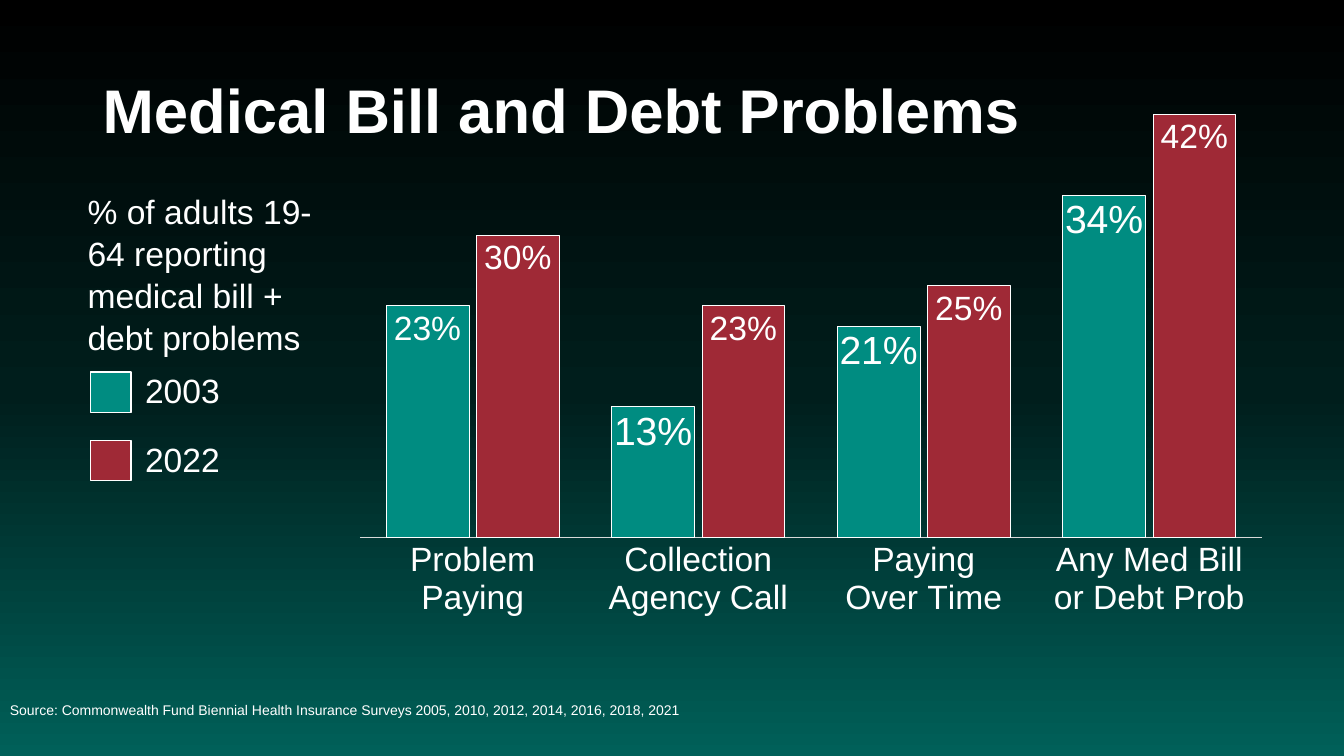
from lxml import etree
from pptx import Presentation
from pptx.chart.data import CategoryChartData
from pptx.dml.color import RGBColor
from pptx.enum.chart import XL_CHART_TYPE as ChartType
from pptx.enum.chart import XL_LABEL_POSITION as LabelPosition
from pptx.enum.chart import XL_TICK_MARK as TickMark
from pptx.enum.shapes import MSO_SHAPE as Shape
from pptx.enum.text import MSO_ANCHOR as Anchor
from pptx.oxml.ns import qn
from pptx.util import Inches, Pt

# Content
TITLE = "Medical Bill and Debt Problems"
SUBTITLE = "% of adults 19-64 reporting medical bill + debt problems"
SOURCE = ("Source: Commonwealth Fund Biennial Health Insurance Surveys "
          "2005, 2010, 2012, 2014, 2016, 2018, 2021")
CATEGORIES = ["Problem\nPaying", "Collection\nAgency Call",
              "Paying\nOver Time", "Any Med Bill\nor Debt Prob"]

# Style
FONT = "Arial"
WHITE = RGBColor(0xFF, 0xFF, 0xFF)
AXIS_GRAY = RGBColor(0xD9, 0xD9, 0xD9)
TEAL = RGBColor(0x00, 0x8C, 0x81)
RED = RGBColor(0x9F, 0x29, 0x36)
BACKGROUND_STOPS = [(0, "000000"), (52, "001E1C"), (100, "006059")]

# Year, values, colour, label size
SERIES = [
    ("2003", [0.23, 0.13, 0.21, 0.34], TEAL, 28),
    ("2022", [0.30, 0.23, 0.25, 0.42], RED, 24),
]
PLOT_LAYOUT = [("layoutTarget", "inner"), ("xMode", "edge"), ("yMode", "edge"),
               ("x", "0.244"), ("y", "0.001"), ("w", "0.74"), ("h", "0.801")]
LEGEND_LEFT, LEGEND_TOP, LEGEND_STEP, SWATCH = 0.9, 3.69, 0.68, 0.4


def style_font(font, size, bold=False):
    font.name = FONT
    font.size = Pt(size)
    font.bold = bold
    font.color.rgb = WHITE


def style_box(shape, color, line_width):
    shape.fill.solid()
    shape.fill.fore_color.rgb = color
    shape.line.color.rgb = WHITE
    shape.line.width = Pt(line_width)


def add_text(page, text, left, top, width, height, size, bold=False,
             anchor=Anchor.MIDDLE, wrap=True, spacing=1.0):
    box = page.shapes.add_textbox(Inches(left), Inches(top),
                                  Inches(width), Inches(height))
    frame = box.text_frame
    frame.word_wrap = wrap
    frame.vertical_anchor = anchor
    para = frame.paragraphs[0]
    para.line_spacing = spacing
    span = para.add_run()
    span.text = text
    style_font(span.font, size, bold)


def paint_background(page):
    fill = page.background.fill
    fill.gradient()
    fill.gradient_angle = 270
    stops = page.element.find(".//" + qn("a:gsLst"))
    for stop in list(stops):
        stops.remove(stop)
    for percent, color in BACKGROUND_STOPS:
        stop = etree.SubElement(stops, qn("a:gs"), pos=str(percent * 1000))
        etree.SubElement(stop, qn("a:srgbClr"), val=color)


def place_plot(chart):
    area = chart.element.find(".//" + qn("c:plotArea"))
    for old in area.findall(qn("c:layout")):
        area.remove(old)
    layout = etree.Element(qn("c:layout"))
    manual = etree.SubElement(layout, qn("c:manualLayout"))
    for name, value in PLOT_LAYOUT:
        etree.SubElement(manual, qn("c:" + name), val=value)
    area.insert(0, layout)


def add_bars(page):
    data = CategoryChartData(number_format="0%")
    data.categories = CATEGORIES
    for year, values, _, _ in SERIES:
        data.add_series(year, values)
    chart = page.shapes.add_chart(
        ChartType.COLUMN_CLUSTERED, Inches(0.62), Inches(0.93),
        Inches(12.09), Inches(5.49), data).chart
    chart.has_legend = False
    chart.has_title = False
    style_font(chart.font, 20)
    place_plot(chart)

    # Axes
    category_axis = chart.category_axis
    category_axis.major_tick_mark = TickMark.NONE
    category_axis.format.line.color.rgb = AXIS_GRAY
    category_axis.format.line.width = Pt(0.75)
    style_font(category_axis.tick_labels.font, 24)
    value_axis = chart.value_axis
    value_axis.minimum_scale = 0
    value_axis.maximum_scale = 0.44
    value_axis.major_unit = 0.1
    value_axis.has_major_gridlines = False
    value_axis.visible = False

    # Columns and their labels
    plot = chart.plots[0]
    plot.gap_width = 63
    plot.overlap = -9
    plot.vary_by_categories = False
    for series, (_, _, color, size) in zip(plot.series, SERIES):
        style_box(series.format, color, 0.5)
        labels = series.data_labels
        labels.show_value = True
        labels.number_format = "0%"
        labels.number_format_is_linked = False
        labels.position = LabelPosition.INSIDE_END
        style_font(labels.font, size)
    first_label = plot.series[0].points[0].data_label
    style_font(first_label.font, 24)
    first_label.position = LabelPosition.INSIDE_END


def add_legend(page):
    for index, (year, _, color, _) in enumerate(SERIES):
        top = LEGEND_TOP + index * LEGEND_STEP
        swatch = page.shapes.add_shape(
            Shape.RECTANGLE, Inches(LEGEND_LEFT), Inches(top),
            Inches(SWATCH), Inches(SWATCH))
        swatch.shadow.inherit = False
        style_box(swatch, color, 1)
        add_text(page, year, LEGEND_LEFT + 0.44, top - 0.08, 0.95, 0.5, 24,
                 wrap=False, spacing=1.05)


def main():
    deck = Presentation()
    deck.slide_width = Inches(13.33)
    deck.slide_height = Inches(7.5)
    page = deck.slides.add_slide(deck.slide_layouts[6])
    paint_background(page)
    add_bars(page)
    add_text(page, TITLE, 0.92, 0.4, 11.5, 1.45, 44, bold=True, spacing=0.9)
    add_text(page, SOURCE, 0, 6.58, 9, 0.92, 10)
    add_text(page, SUBTITLE, 0.77, 1.82, 2.62, 1.72, 24,
             anchor=Anchor.TOP, spacing=1.05)
    add_legend(page)
    deck.save("out.pptx")


if __name__ == "__main__":
    main()
